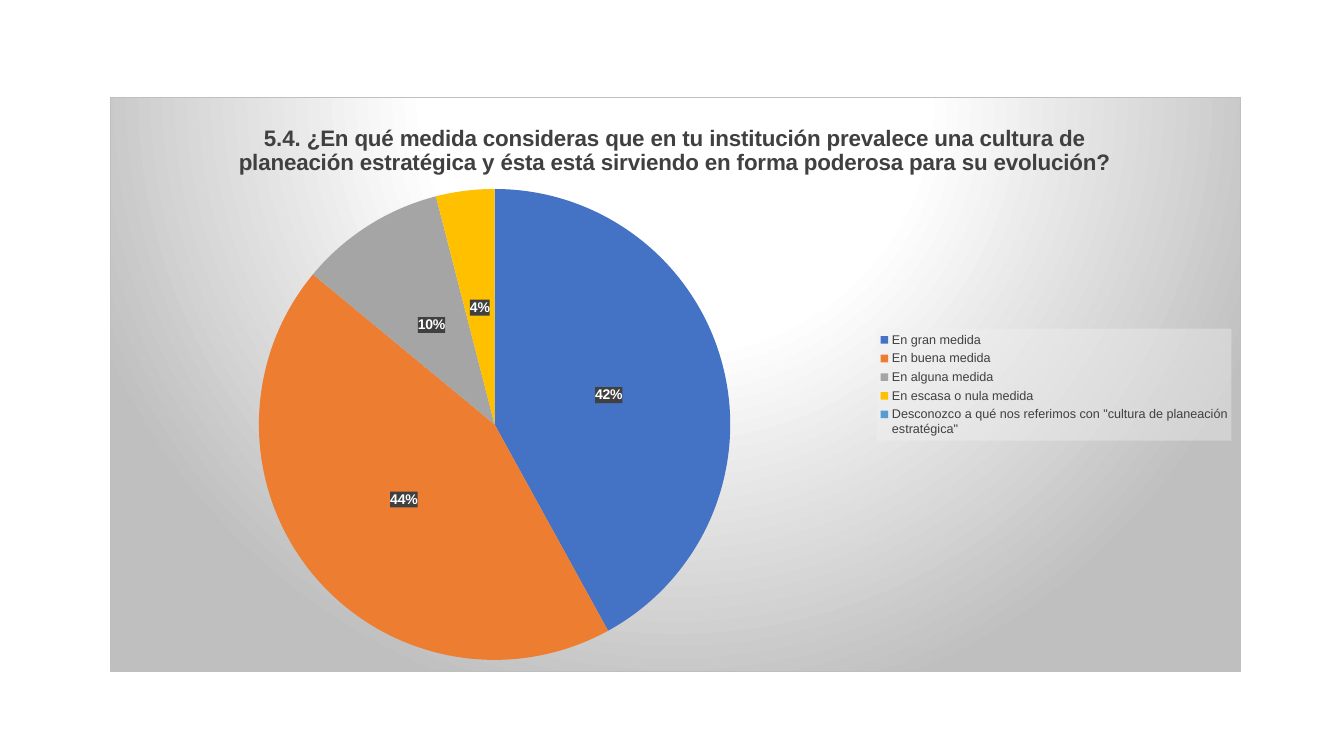
from dataclasses import dataclass

from lxml import etree
from pptx import Presentation
from pptx.chart.data import CategoryChartData
from pptx.dml.color import RGBColor
from pptx.enum.chart import XL_CHART_TYPE, XL_LABEL_POSITION, XL_LEGEND_POSITION
from pptx.oxml import parse_xml
from pptx.oxml.ns import nsdecls, qn
from pptx.util import Pt

PIE = XL_CHART_TYPE.PIE
CENTER = XL_LABEL_POSITION.CENTER
RIGHT = XL_LEGEND_POSITION.RIGHT


@dataclass(frozen=True)
class Theme:
    font: str = "Arial"
    ink: str = "404040"
    white: str = "FFFFFF"
    edge: str = "BFBFBF"
    legend_back: str = "F2F2F2"
    slices: tuple = ("4472C4", "ED7D31", "A5A5A5", "FFC000", "5B9BD5")
    title_size: float = 16
    label_size: float = 10
    legend_size: float = 9


THEME = Theme()
QUESTION = (
    "5.4. ¿En qué medida consideras que en tu institución prevalece una cultura de "
    "planeación estratégica y ésta está sirviendo en forma poderosa para su evolución?"
)
ANSWERS = {
    "En gran medida": 42,
    "En buena medida": 44,
    "En alguna medida": 10,
    "En escasa o nula medida": 4,
    'Desconozco a qué nos referimos con "cultura de planeación estratégica"': 0,
}


def style_font(font, size, color, bold=False):
    font.name = THEME.font
    font.size = Pt(size)
    font.bold = bold
    font.color.rgb = RGBColor.from_string(color)


def solid_properties(color, opacity):
    return parse_xml(
        f'<c:spPr {nsdecls("c", "a")}><a:solidFill><a:srgbClr val="{color}">'
        f'<a:alpha val="{opacity * 1000}"/></a:srgbClr></a:solidFill>'
        "<a:ln><a:noFill/></a:ln></c:spPr>"
    )


def place(part, inner=False, **fractions):
    """Set a chart part's manual layout in fractions of the chart area."""
    previous = part.find(qn("c:layout"))
    if previous is not None:
        part.remove(previous)
    layout = etree.Element(qn("c:layout"))
    manual = etree.SubElement(layout, qn("c:manualLayout"))
    settings = {"layoutTarget": "inner"} if inner else {}
    settings.update({f"{axis}Mode": "edge" for axis in "xy"})
    settings.update(fractions)
    for tag, value in settings.items():
        etree.SubElement(manual, qn(f"c:{tag}")).set("val", str(value))
    overlay = part.find(qn("c:overlay"))
    if overlay is None:
        part.insert(0, layout)
    else:
        overlay.addprevious(layout)


def fill_background(chart):
    stops = "".join(
        f'<a:gs pos="{percent * 1000}"><a:srgbClr val="{color}"/></a:gs>'
        for percent, color in ((0, THEME.white), (39, THEME.white), (100, THEME.edge))
    )
    properties = parse_xml(
        f'<c:spPr {nsdecls("c", "a")}><a:gradFill><a:gsLst>{stops}</a:gsLst>'
        '<a:path path="circle"><a:fillToRect l="50000" t="-80000" r="50000" b="180000"/>'
        f'</a:path></a:gradFill><a:ln w="{Pt(0.75)}"><a:solidFill>'
        f'<a:srgbClr val="{THEME.edge}"/></a:solidFill></a:ln></c:spPr>'
    )
    chart.element.find(qn("c:chart")).addnext(properties)


def add_question(chart):
    chart.has_title = True
    run = chart.chart_title.text_frame.paragraphs[0].add_run()
    run.text = QUESTION
    style_font(run.font, THEME.title_size, THEME.ink, bold=True)
    place(chart.element.find(".//" + qn("c:title")), x=0.11, y=0.04)


def color_slices(chart):
    plot = chart.plots[0]
    plot.vary_by_categories = True
    answers = plot.series[0]
    for index, color in enumerate(THEME.slices):
        piece = answers.points[index].format
        piece.fill.solid()
        piece.fill.fore_color.rgb = RGBColor.from_string(color)
        piece.line.fill.background()
    place(chart.element.find(".//" + qn("c:plotArea")), inner=True,
          x=0.13, y=0.16, w=0.42, h=0.82)


def label_slices(chart):
    labels = chart.plots[0].series[0].data_labels
    labels.show_percentage = True
    labels.show_value = False
    labels.number_format = "0%"
    labels.number_format_is_linked = False
    labels.position = CENTER
    style_font(labels.font, THEME.label_size, THEME.white, bold=True)
    group = chart.element.find(".//" + qn("c:dLbls"))
    group.find(qn("c:txPr")).addprevious(solid_properties(THEME.ink, 90))
    empty = [index for index, share in enumerate(ANSWERS.values()) if share == 0]
    for position, index in enumerate(empty):
        group.insert(position, parse_xml(
            f'<c:dLbl {nsdecls("c")}><c:idx val="{index}"/><c:delete val="1"/></c:dLbl>'
        ))


def add_legend(chart):
    chart.has_legend = True
    chart.legend.position = RIGHT
    chart.legend.include_in_layout = False
    style_font(chart.legend.font, THEME.legend_size, THEME.ink)
    legend = chart.element.find(".//" + qn("c:legend"))
    place(legend, x=0.678, y=0.403, w=0.314, h=0.195)
    legend.find(qn("c:overlay")).addnext(solid_properties(THEME.legend_back, 39))


def add_answer_chart(slide, left, top, width, height):
    shares = CategoryChartData()
    shares.categories = list(ANSWERS)
    shares.add_series("Series 1", list(ANSWERS.values()))
    chart = slide.shapes.add_chart(
        PIE, Pt(left), Pt(top), Pt(width), Pt(height), shares
    ).chart
    style_font(chart.font, THEME.label_size, "000000")
    fill_background(chart)
    add_question(chart)
    color_slices(chart)
    label_slices(chart)
    add_legend(chart)


def main():
    deck = Presentation()
    deck.slide_width, deck.slide_height = Pt(960), Pt(540)
    slide = deck.slides.add_slide(deck.slide_layouts.get_by_name("Blank"))
    add_answer_chart(slide, left=78.5, top=69, width=808, height=411)
    deck.save("out.pptx")


if __name__ == "__main__":
    main()
